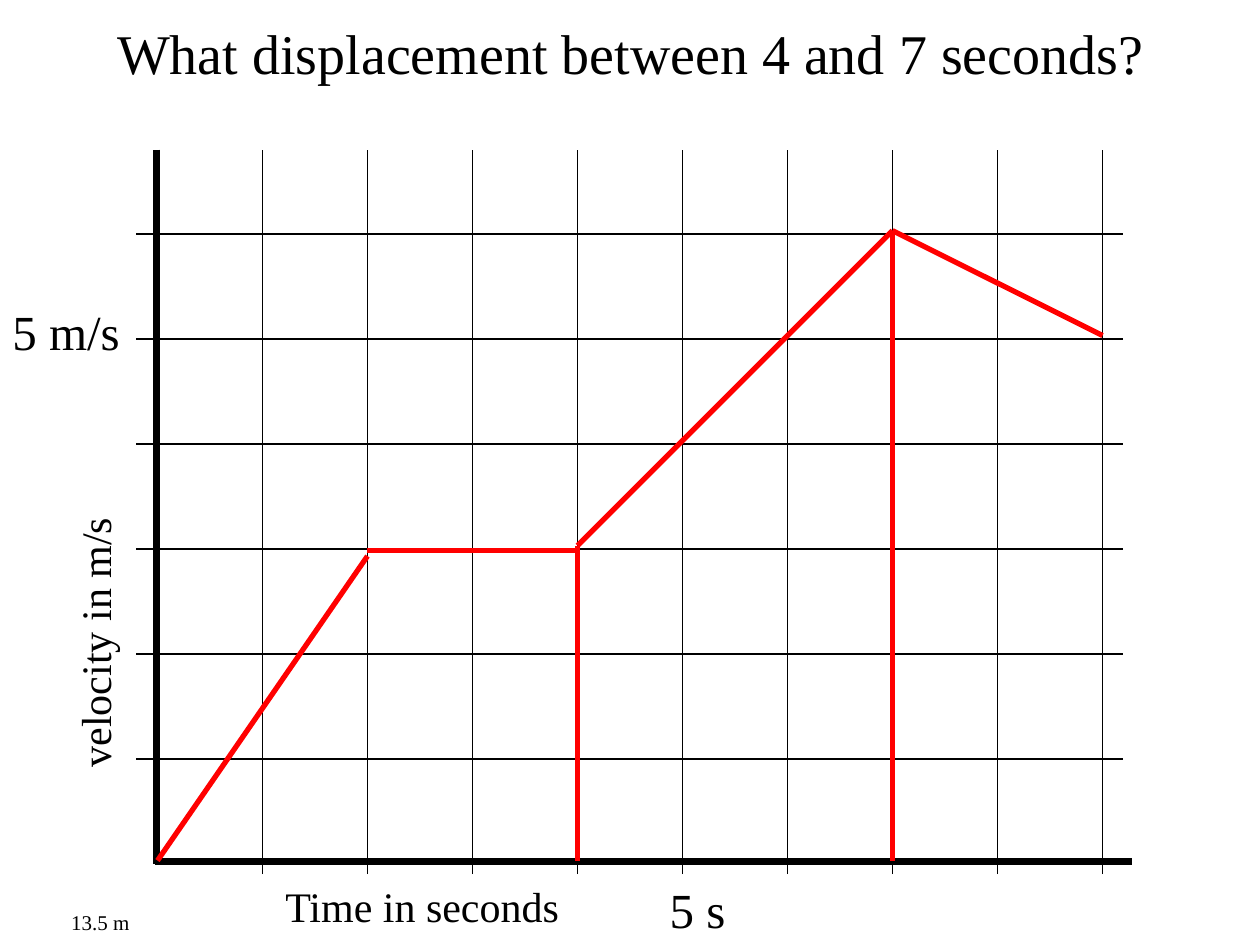
from dataclasses import dataclass

from lxml.etree import SubElement
from pptx import Presentation
from pptx.dml.color import RGBColor as RGB
from pptx.enum.shapes import MSO_CONNECTOR as CONN
from pptx.enum.text import MSO_ANCHOR as ANCHOR, MSO_AUTO_SIZE as FIT, PP_ALIGN as ALIGN
from pptx.oxml.ns import qn
from pptx.util import Inches, Pt


@dataclass(frozen=True)
class Theme:
    font: str = "Times New Roman"
    ink: RGB = RGB(0, 0, 0)
    curve: RGB = RGB(255, 0, 0)
    title: int = 32
    mark: int = 28
    axis: int = 24
    answer: int = 12
    grid_w: int = 1
    curve_w: int = 3
    axis_w: int = 4


@dataclass(frozen=True)
class Grid:
    """Plot box: columns are seconds, rows are m/s, counted from the origin."""
    left: int
    top: int
    width: int
    height: int
    cols: int
    rows: int

    def x(self, col):
        return round(self.left + col * self.width / self.cols)

    def y(self, row):
        return round(self.top + self.height - row * self.height / self.rows)

    def span(self, cols, rows):
        return round(cols * self.width / self.cols), round(rows * self.height / self.rows)


THEME = Theme()
GRID_DROP = 0.03  # rows by which the rules sit below the curve's scale


def write(sp, text, size):
    tf = sp.text_frame
    frame = {"word_wrap": False, "auto_size": FIT.SHAPE_TO_FIT_TEXT,
             "vertical_anchor": ANCHOR.TOP}
    for name, value in frame.items():
        setattr(tf, name, value)
    p = tf.paragraphs[0]
    p.alignment = ALIGN.LEFT
    r = p.add_run()
    r.text = text
    for name, value in {"name": THEME.font, "size": Pt(size)}.items():
        setattr(r.font, name, value)
    r.font.color.rgb = THEME.ink


def add_line(shapes, grid, start, end, color, width):
    (c1, r1), (c2, r2) = start, end
    line = shapes.add_connector(CONN.STRAIGHT, grid.x(c1), grid.y(r1), grid.x(c2), grid.y(r2))
    line.line.color.rgb = color
    line.line.width = Pt(width)
    SubElement(line._element.spPr, qn("a:effectLst"))


def add_label(shapes, grid, text, size, col, row, cols, rows, rotation=0):
    """Place a label by its top left corner and size, in grid units."""
    sp = shapes.add_textbox(grid.x(col), grid.y(row), *grid.span(cols, rows))
    sp.rotation = rotation
    write(sp, text, size)


def add_title(slide, text, left, top, width, height):
    sp = slide.shapes.title
    for name, value in zip(("left", "top", "width", "height"), (left, top, width, height)):
        setattr(sp, name, value)
    write(sp, text, THEME.title)


def add_axes(shapes, grid):
    top, right = 6.77, 9.28
    # Thick axes
    for start, end in (((-0.01, top), (-0.01, -GRID_DROP)), ((-0.02, -0.01), (right, -0.01))):
        add_line(shapes, grid, start, end, THEME.ink, THEME.axis_w)
    # One rule for each second and each m/s
    for col in range(1, grid.cols + 1):
        add_line(shapes, grid, (col, -0.13), (col, top), THEME.ink, THEME.grid_w)
    for row in range(1, grid.rows + 1):
        y = row - GRID_DROP
        add_line(shapes, grid, (-0.2, y), (grid.cols + 0.2, y), THEME.ink, THEME.grid_w)
    # Axis names and scale marks
    add_label(shapes, grid, "velocity in m/s", THEME.axis, -1.91, 2.38, 2.62, 0.6, 270)
    add_label(shapes, grid, "Time in seconds", THEME.axis, 1.1, -0.13, 2.86, 0.6)
    add_label(shapes, grid, "5 s", THEME.mark, 4.76, -0.12, 0.77, 0.68)
    add_label(shapes, grid, "5 m/s", THEME.mark, -1.5, 5.38, 1.26, 0.68)


def add_answer(shapes, grid):
    # Wide enough to keep the number and its unit on one line
    add_label(shapes, grid, "13.5 m", THEME.answer, -0.94, -0.41, 0.88, 0.36)


def add_curve(shapes, grid):
    segments = [
        ((0, 0), (2, 2.9)), ((2, 2.95), (4, 2.95)), ((4, 3), (7, 6)), ((7, 6), (9, 5)),
        ((4, 3), (4, 0)), ((7, 6), (7, 0)),  # bounds of the area asked for
    ]
    for start, end in segments:
        add_line(shapes, grid, start, end, THEME.curve, THEME.curve_w)


def main():
    prs = Presentation()
    prs.slide_width, prs.slide_height = Inches(10), Inches(7.5)
    slide = prs.slides.add_slide(prs.slide_layouts[5])
    grid = Grid(Inches(1.25), Inches(1.83), Inches(7.5), Inches(5), cols=9, rows=6)

    add_axes(slide.shapes.add_group_shape().shapes, grid)
    add_title(slide, "What displacement between 4 and 7 seconds?",
              Inches(0.83), Inches(0.1), Inches(8.36), Inches(0.63))
    add_answer(slide.shapes, grid)
    add_curve(slide.shapes, grid)
    prs.save("out.pptx")


if __name__ == "__main__":
    main()
